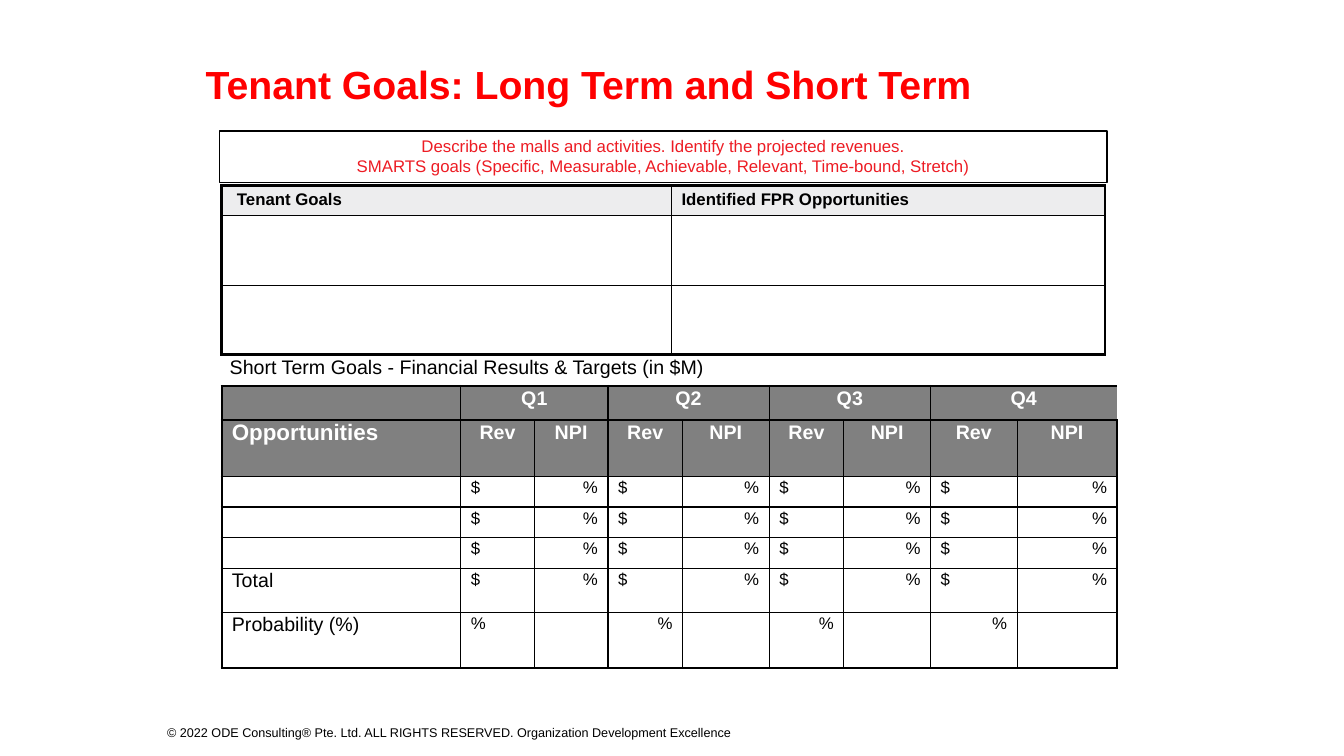
"""Build the tenant goals slide with its goal and quarterly target tables."""
from dataclasses import dataclass

from lxml.etree import SubElement
from pptx import Presentation
from pptx.dml.color import RGBColor
from pptx.enum.shapes import MSO_SHAPE
from pptx.enum.text import MSO_ANCHOR, PP_ALIGN
from pptx.oxml.ns import qn
from pptx.slide import Slide
from pptx.util import Inches, Pt

BLACK, WHITE, RED, CRIMSON = "000000", "FFFFFF", "FF0000", "ED1C24"
LIGHT, GREY = "EDEDEE", "808080"
LEFT, CENTER, RIGHT = PP_ALIGN.LEFT, PP_ALIGN.CENTER, PP_ALIGN.RIGHT


@dataclass
class Style:
    size: float = 12
    color: str = BLACK
    bold: bool = False
    align: PP_ALIGN = LEFT
    spacing: float = 1.0


@dataclass
class Label:
    text: str
    box: tuple[float, float, float, float]
    style: Style
    anchor: MSO_ANCHOR = MSO_ANCHOR.TOP
    margins: tuple[float, float] = (0.1, 0.05)
    outlined: bool = False


@dataclass
class Cell:
    text: str
    style: Style
    fill: str = ""
    span: int = 1
    margin: float = 0.1


@dataclass
class Grid:
    left: float
    top: float
    cols: list[float]
    rows: list[float]
    cells: list[list[Cell]]
    outer: dict[str, float]
    open_header: bool = False


def rgb(color: str) -> RGBColor:
    return RGBColor.from_string(color)


def write(tf, text: str, style: Style) -> None:
    tf.text = text
    for p in tf.paragraphs:
        p.alignment = style.align
        p.line_spacing = style.spacing
        for r in p.runs:
            r.font.name = "Arial"
            r.font.size = Pt(style.size)
            r.font.bold = style.bold
            r.font.color.rgb = rgb(style.color)
        if not p.runs:
            SubElement(p._p, qn("a:endParaRPr"), sz=str(int(style.size * 100)))


def add_label(s: Slide, label: Label) -> None:
    box = [Inches(v) for v in label.box]
    if label.outlined:
        sp = s.shapes.add_shape(MSO_SHAPE.RECTANGLE, *box)
        sp.shadow.inherit = False
        sp.fill.background()
        sp.line.color.rgb = rgb(BLACK)
        sp.line.width = Pt(1)
    else:
        sp = s.shapes.add_textbox(*box)
    tf = sp.text_frame
    tf.word_wrap = True
    tf.vertical_anchor = label.anchor
    tf.margin_left = tf.margin_right = Inches(label.margins[0])
    tf.margin_top = tf.margin_bottom = Inches(label.margins[1])
    write(tf, label.text, label.style)


def set_borders(cell, widths: dict[str, float]) -> None:
    tc_pr = cell._tc.get_or_add_tcPr()
    for side in "LRTB":
        ln = SubElement(tc_pr, qn(f"a:ln{side}"), w=str(int(Pt(widths[side]))))
        if widths[side]:
            SubElement(SubElement(ln, qn("a:solidFill")), qn("a:srgbClr"), val=BLACK)
        else:
            SubElement(ln, qn("a:noFill"))


def add_grid(s: Slide, grid: Grid) -> None:
    n_rows, n_cols = len(grid.rows), len(grid.cols)
    frame = s.shapes.add_table(n_rows, n_cols, Inches(grid.left), Inches(grid.top),
                               Inches(sum(grid.cols)), Inches(sum(grid.rows)))
    table = frame.table
    table.first_row = table.horz_banding = False
    for column, width in zip(table.columns, grid.cols):
        column.width = Inches(width)
    for row, height in zip(table.rows, grid.rows):
        row.height = Inches(height)
    for i, row in enumerate(grid.cells):
        j = 0
        for item in row:
            end = j + item.span - 1
            cell = table.cell(i, j)
            if item.span > 1:
                cell.merge(table.cell(i, end))
            edges = {"L": j == 0, "R": end == n_cols - 1,
                     "T": i == 0, "B": i == n_rows - 1}
            widths = {side: grid.outer[side] if edge else 1 for side, edge in edges.items()}
            if grid.open_header and i == 0 and edges["R"]:
                widths["R"] = 0
            for k in range(j, end + 1):
                part = table.cell(i, k)
                set_borders(part, widths)
                if item.fill:
                    part.fill.solid()
                    part.fill.fore_color.rgb = rgb(item.fill)
                else:
                    part.fill.background()
            cell.margin_left = Inches(item.margin)
            write(cell.text_frame, item.text, item.style)
            j = end + 1


def goals_grid() -> Grid:
    head = Style(bold=True)
    header = [Cell("Tenant Goals", head, LIGHT, margin=0.15),
              Cell("Identified FPR Opportunities", head, LIGHT)]
    blank = [Cell("", Style())] * 2
    return Grid(2.2, 1.84, [4.46, 4.3], [0.3, 0.69, 0.69], [header, blank, blank],
                dict.fromkeys("LRTB", 2.25))


def targets_grid() -> Grid:
    head = Style(14, WHITE, True, CENTER, 0.8)
    corner = Style(16, WHITE, True, LEFT, 0.8)
    name = Style(14, spacing=0.8)
    start = Style(spacing=0.8)
    end = Style(align=RIGHT, spacing=0.8)
    empty = Cell("", start)
    amounts = [Cell("$", start), Cell("%", end)] * 4
    quarters = [Cell(f"Q{n}", head, GREY, span=2) for n in range(1, 5)]
    measures = [Cell("Rev", head, GREY), Cell("NPI", head, GREY)] * 4
    chances = [Cell("%", start), empty] + [Cell("%", end), empty] * 3
    cells = [[Cell("", head, GREY)] + quarters,
             [Cell("Opportunities", corner, GREY)] + measures,
             *[[empty] + amounts] * 3,
             [Cell("Total", name)] + amounts,
             [Cell("Probability (%)", name)] + chances]
    return Grid(2.2, 3.83, [2.37, 0.73, 0.73, 0.74, 0.86, 0.74, 0.86, 0.86, 0.99],
                [0.3, 0.56, 0.3, 0.3, 0.3, 0.44, 0.55], cells,
                {"L": 2, "R": 1, "T": 2, "B": 2}, open_header=True)


LABELS = [
    Label("© 2022 ODE Consulting® Pte. Ltd. ALL RIGHTS RESERVED. "
          "Organization Development Excellence",
          (1.56, 7.14, 7.37, 0.25), Style(9), MSO_ANCHOR.MIDDLE),
    Label("Tenant Goals: Long Term and Short Term", (2.04, 0.55, 9, 0.62),
          Style(28, RED, True, spacing=0.9), MSO_ANCHOR.MIDDLE, (0, 0)),
    Label("Short Term Goals - Financial Results & Targets (in $M)",
          (2.18, 3.47, 9.08, 0.33), Style(14)),
    Label("Describe the malls and activities. Identify the projected revenues.\n"
          "SMARTS goals (Specific, Measurable, Achievable, Relevant, Time-bound, Stretch)",
          (2.18, 1.3, 8.8, 0.51), Style(12, CRIMSON, align=CENTER), outlined=True),
]


def main() -> None:
    prs = Presentation()
    prs.slide_width, prs.slide_height = Inches(13.33), Inches(7.5)
    s = prs.slides.add_slide(prs.slide_layouts[6])
    for grid in (goals_grid(), targets_grid()):
        add_grid(s, grid)
    for label in LABELS:
        add_label(s, label)
    prs.save("out.pptx")


if __name__ == "__main__":
    main()
